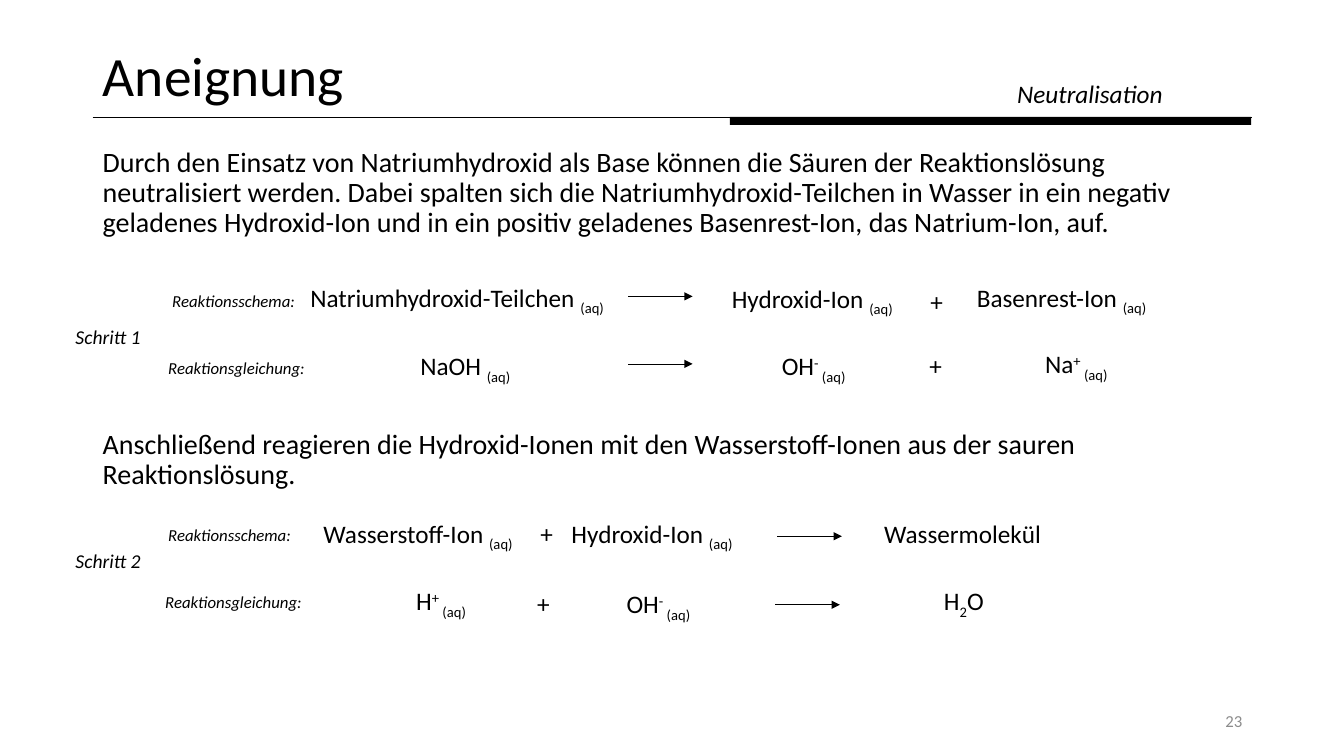
from lxml import etree
from pptx import Presentation
from pptx.dml.color import RGBColor
from pptx.enum.shapes import MSO_CONNECTOR, MSO_SHAPE
from pptx.enum.text import MSO_ANCHOR, MSO_AUTO_SIZE, PP_ALIGN
from pptx.oxml.ns import qn
from pptx.util import Inches, Pt

LEFT, CENTER, RIGHT = PP_ALIGN.LEFT, PP_ALIGN.CENTER, PP_ALIGN.RIGHT
TOP, MIDDLE = MSO_ANCHOR.TOP, MSO_ANCHOR.MIDDLE
NO_AUTOFIT = MSO_AUTO_SIZE.NONE
STRAIGHT, RECTANGLE = MSO_CONNECTOR.STRAIGHT, MSO_SHAPE.RECTANGLE
FONT, BLACK, GRAY = "Calibri", "000000", "8C8C8C"
SUB, SUPER = -25, 30

TITLE = "Aneignung"
TOPIC = "Neutralisation"
PAGE_NUMBER = "23"
EXPLANATIONS = [
    "Durch den Einsatz von Natriumhydroxid als Base können die Säuren der "
    "Reaktionslösung neutralisiert werden. Dabei spalten sich die "
    "Natriumhydroxid-Teilchen in Wasser in ein negativ geladenes Hydroxid-Ion "
    "und in ein positiv geladenes Basenrest-Ion, das Natrium-Ion, auf.",
    "Anschließend reagieren die Hydroxid-Ionen mit den Wasserstoff-Ionen aus "
    "der sauren Reaktionslösung.",
]
AQUEOUS = ("(aq)", SUB)
HYDROXIDE = [("OH", 0), ("- ", SUPER), AQUEOUS]
WATER = [("H", 0), ("2", SUB), ("O", 0)]

STEPS = [("Schritt 1", 3.17), ("Schritt 2", 5.4)]
ROW_LABELS = [
    ("Reaktionsschema:", 1.61, 2.84),
    ("Reaktionsgleichung:", 1.57, 3.5),
    ("Reaktionsschema:", 1.57, 5.16),
    ("Reaktionsgleichung:", 1.54, 5.82),
]
SPECIES = [
    ([("Natriumhydroxid-Teilchen ", 0), AQUEOUS], 2.98, 2.75, 3.44, LEFT),
    ([("Hydroxid-Ion ", 0), AQUEOUS], 7.16, 2.76, 1.97, LEFT),
    ([("Basenrest-Ion ", 0), AQUEOUS], 9.59, 2.75, 1.94, LEFT),
    ([("NaOH ", 0), AQUEOUS], 3.64, 3.43, 1.95, CENTER),
    (HYDROXIDE, 7.02, 3.43, 2.1, CENTER),
    ([("Na", 0), ("+ ", SUPER), AQUEOUS], 9.7, 3.41, 1.95, CENTER),
    ([("Wasserstoff-Ion ", 0), AQUEOUS], 3.11, 5.09, 2.26, LEFT),
    ([("Hydroxid-Ion ", 0), AQUEOUS], 5.57, 5.09, 2.26, LEFT),
    ([("Wassermolekül", 0)], 8.67, 5.09, 2.26, LEFT),
    ([("H", 0), ("+ ", SUPER), AQUEOUS], 3.79, 5.76, 1.17, CENTER),
    (HYDROXIDE, 5.48, 5.79, 2.1, CENTER),
    (WATER, 8.51, 5.76, 2.1, CENTER),
]
PLUS_SIGNS = [(9.13, 2.79), (9.12, 3.43), (5.26, 5.09), (5.23, 5.79)]
ARROWS = [(6.23, 2.94), (6.23, 3.61), (7.71, 5.32), (7.69, 6)]
ARROW_LENGTH = 0.64


def color(value):
    return RGBColor.from_string(value)


def write(shape, paragraphs, size=18, fill=BLACK, italic=False, align=LEFT,
          anchor=TOP, line_spacing=None, gap=0):
    frame = shape.text_frame
    frame.word_wrap = True
    frame.auto_size = NO_AUTOFIT
    frame.vertical_anchor = anchor
    for index, runs in enumerate(paragraphs):
        paragraph = frame.add_paragraph() if index else frame.paragraphs[0]
        paragraph.alignment = align
        if line_spacing:
            paragraph.line_spacing = line_spacing
        if index:
            paragraph.space_before = Pt(gap)
        for text, baseline in runs:
            run = paragraph.add_run()
            run.text = text
            run.font.name = FONT
            run.font.size = Pt(size)
            run.font.italic = italic
            run.font.color.rgb = color(fill)
            if baseline:
                run._r.get_or_add_rPr().set("baseline", str(baseline * 1000))


def add_text(slide, paragraphs, left, top, width, height, **formatting):
    box = slide.shapes.add_textbox(
        Inches(left), Inches(top), Inches(width), Inches(height))
    write(box, paragraphs, **formatting)


def add_line(slide, left, top, length, arrow=False):
    line = slide.shapes.add_connector(
        STRAIGHT, Inches(left), Inches(top), Inches(left + length), Inches(top))
    line.line.color.rgb = color(BLACK)
    line.line.width = Pt(0.5)
    if arrow:
        etree.SubElement(line.line._get_or_add_ln(), qn("a:tailEnd"), type="triangle")
    etree.SubElement(line._element.spPr, qn("a:effectLst"))


def add_header(slide):
    add_line(slide, 0.92, 1.16, 11.5)
    bar = slide.shapes.add_shape(
        RECTANGLE, Inches(7.24), Inches(1.16), Inches(5.17), Inches(0.08))
    bar.shadow.inherit = False
    bar.fill.solid()
    bar.fill.fore_color.rgb = color(BLACK)
    bar.line.fill.background()
    title = slide.shapes.title
    title.left, title.top = Inches(0.92), Inches(0.4)
    title.width, title.height = Inches(11.5), Inches(0.76)
    write(title, [[(TITLE, 0)]], size=39.6, anchor=MIDDLE, line_spacing=0.9)
    add_text(slide, [[(TOPIC, 0)]], 9.99, 0.73, 2.76, 0.4, italic=True)


def main():
    presentation = Presentation()
    presentation.slide_width = Inches(13.33)
    presentation.slide_height = Inches(7.5)
    slide = presentation.slides.add_slide(presentation.slide_layouts[5])

    add_header(slide)
    add_text(slide, [[(text, 0)] for text in EXPLANATIONS], 0.92, 1.42, 11.5, 5.33,
             size=20, line_spacing=0.9, gap=136.5)
    for text, top in STEPS:
        add_text(slide, [[(text, 0)]], 0.65, top, 1.19, 0.34, size=14, italic=True)
    for text, left, top in ROW_LABELS:
        add_text(slide, [[(text, 0)]], left, top, 1.62, 0.3, size=12, italic=True)
    for runs, left, top, width, align in SPECIES:
        add_text(slide, [runs], left, top, width, 0.4, align=align)
    for left, top in PLUS_SIGNS:
        add_text(slide, [[("+", 0)]], left, top, 0.31, 0.4)
    for left, top in ARROWS:
        add_line(slide, left, top, ARROW_LENGTH, arrow=True)
    add_text(slide, [[(PAGE_NUMBER, 0)]], 9.42, 6.95, 3, 0.4,
             size=12, fill=GRAY, align=RIGHT, anchor=MIDDLE)
    presentation.save("out.pptx")


if __name__ == "__main__":
    main()
